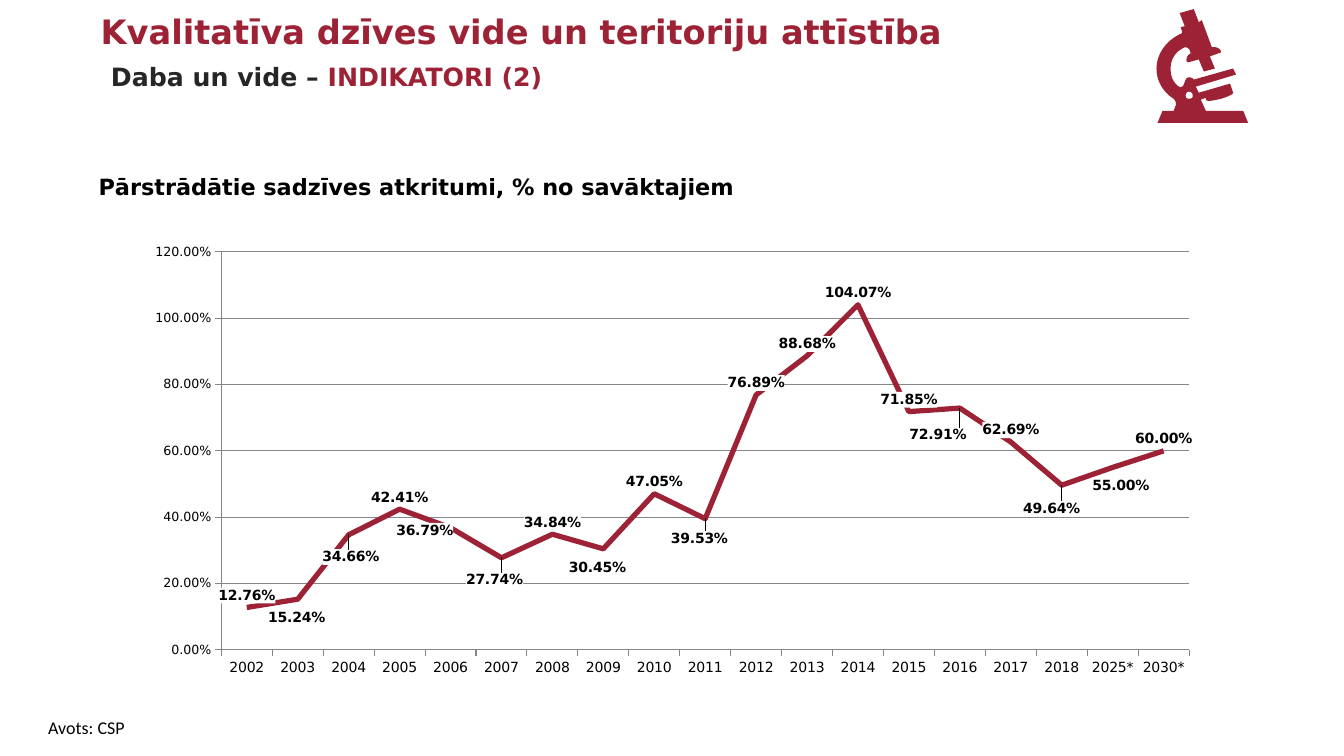
import pptx
import pptx.chart.data
import pptx.dml.color
import pptx.enum.chart
import pptx.enum.text
import pptx.oxml
import pptx.oxml.ns
import pptx.util

CRIMSON = "9D2235"
CHARCOAL = "262626"
BLACK = "000000"
WHITE = "FFFFFF"
GREY = "868686"

YEARS = [str(year) for year in range(2002, 2019)] + ["2025*", "2030*"]
RECYCLED = [0.1276, 0.1524, 0.3466, 0.4241, 0.3679, 0.2774, 0.3484, 0.3045, 0.4705, 0.3953,
            0.7689, 0.8868, 1.0407, 0.7185, 0.7291, 0.6269, 0.4964, 0.55, 0.6]
LABEL_SHIFTS = {"2003": (-0.1, 6.7), "2004": (0.2, 7.6), "2006": (-2.4, 3.3),
                "2007": (-0.65, 7.6), "2009": (-0.55, 6.9), "2011": (-0.55, 7.1),
                "2016": (-2.05, 8.7), "2018": (-0.95, 7.8), "2025*": (0.75, 6.7)}

MICROSCOPE = [
    (11.84, 0.09), (11.7, 0.13), (11.75, 0.26), (11.71, 0.27), (11.72, 0.3),
    (11.73, 0.32, 11.72, 0.34, 11.7, 0.34), (11.56, 0.41, 11.47, 0.54, 11.47, 0.68),
    (11.47, 0.8, 11.53, 0.91, 11.64, 0.98), (11.66, 1, 11.67, 1.03, 11.66, 1.05),
    (11.64, 1.1), (11.53, 1.1), (11.48, 1.22), (12.38, 1.22), (12.33, 1.1), (11.96, 1.1),
    (11.91, 0.99), (11.96, 0.97), (11.96, 0.99), (11.97, 1.01, 12.03, 1, 12.11, 0.98),
    (12.18, 0.96, 12.24, 0.93, 12.23, 0.92), (12.2, 0.83), (11.89, 0.92), (11.86, 0.86),
    (12.26, 0.74), (12.23, 0.68), (11.84, 0.79), (11.82, 0.76, 11.77, 0.76, 11.76, 0.79),
    (11.74, 0.84), (11.73, 0.87, 11.7, 0.87, 11.68, 0.85),
    (11.63, 0.81, 11.61, 0.75, 11.61, 0.68), (11.61, 0.6, 11.65, 0.52, 11.73, 0.48),
    (11.75, 0.46, 11.79, 0.47, 11.8, 0.5), (11.81, 0.53),
    (11.78, 0.54, 11.76, 0.58, 11.77, 0.61), (11.78, 0.62), (11.89, 0.59), (11.94, 0.71),
    (12.05, 0.68), (12, 0.56), (12.11, 0.52), (12.11, 0.51),
    (12.1, 0.48, 12.06, 0.46, 12.02, 0.47), (11.92, 0.2), (11.89, 0.22)]
SCREW = [
    (11.79, 0.91), (11.82, 0.91, 11.83, 0.93, 11.83, 0.95),
    (11.83, 0.97, 11.82, 0.98, 11.79, 0.98), (11.77, 0.98, 11.76, 0.97, 11.76, 0.95),
    (11.76, 0.93, 11.77, 0.91, 11.79, 0.91)]


def colour(value):
    return pptx.dml.color.RGBColor.from_string(value)


def chart_xml(markup):
    head, tail = markup.split(">", 1) if not markup.split(">", 1)[0].endswith("/") else (
        markup.split("/>", 1)[0], None)
    names = pptx.oxml.ns.nsdecls("c", "a")
    return pptx.oxml.parse_xml(f"{head} {names}/>" if tail is None else f"{head} {names}>{tail}")


def layout_xml(marks, **shares):
    sides = "".join(f'<c:{side} val="{share / 100:.4f}"/>' for side, share in shares.items())
    return chart_xml(f"<c:layout><c:manualLayout>{marks}{sides}</c:manualLayout></c:layout>")


def outline_points(steps, units, pieces=8):
    points = [steps[0]]
    for step in steps[1:]:
        if len(step) == 2:
            points.append(step)
            continue
        corners = [points[-1], step[:2], step[2:4], step[4:]]
        for piece in range(1, pieces + 1):
            t = piece / pieces
            weights = ((1 - t) ** 3, 3 * t * (1 - t) ** 2, 3 * t * t * (1 - t), t ** 3)
            points.append(tuple(sum(w * corner[axis] for w, corner in zip(weights, corners))
                                for axis in (0, 1)))
    return [(x * units, y * units) for x, y in points]


class Page:
    font = "DejaVu Sans"

    def __init__(self, deck):
        self.width, self.height = deck.slide_width, deck.slide_height
        self.slide = deck.slides.add_slide(deck.slide_layouts[6])

    def place(self, left, top, width, height):
        return [round(share / 100 * full) for share, full in zip(
            (left, top, width, height), (self.width, self.height) * 2)]

    def style(self, font, size, shade=BLACK, bold=False, name=None):
        font.name, font.size, font.bold = name or self.font, pptx.util.Pt(size), bold
        font.color.rgb = colour(shade)

    def text(self, area, spans, size, bold=True, name=None, wrap=True, inset=None,
             gap=None, line=None):
        box = self.slide.shapes.add_textbox(*self.place(*area))
        frame = box.text_frame
        frame.word_wrap = wrap
        if inset is not None:
            frame.margin_left = frame.margin_right = pptx.util.Inches(inset)
            frame.margin_top = frame.margin_bottom = pptx.util.Inches(inset)
        para = frame.paragraphs[0]
        if gap is not None:
            para.space_before = para.space_after = pptx.util.Pt(gap)
        if line is not None:
            para.line_spacing = line
        for words, shade in spans:
            span = para.add_run()
            span.text = words
            self.style(span.font, size, shade, bold, name)

    def icon(self, outlines, shade):
        units = 10000
        first, *others = [outline_points(steps, units) for steps in outlines]
        builder = self.slide.shapes.build_freeform(*first[0], scale=914400 / units)
        builder.add_line_segments(first[1:], close=True)
        for points in others:
            builder.move_to(*points[0])
            builder.add_line_segments(points[1:], close=True)
        shape = builder.convert_to_shape()
        shape.shadow.inherit = False
        shape.fill.solid()
        shape.fill.fore_color.rgb = colour(shade)
        shape.line.fill.background()

    def line_chart(self, area, plot_area, years, values, shifts, shade):
        chart_data = pptx.chart.data.CategoryChartData(number_format="0.00%")
        chart_data.categories = years
        chart_data.add_series("Series 1", values)
        chart = self.slide.shapes.add_chart(
            pptx.enum.chart.XL_CHART_TYPE.LINE_STACKED, *self.place(*area), chart_data).chart
        chart.has_legend = chart.has_title = False
        self.style(chart.font, 10, name="Calibri")
        self.axes(chart)
        plot = chart.plots[0]
        plot.vary_by_categories = False
        series = plot.series[0]
        series.smooth = False
        series.marker.style = pptx.enum.chart.XL_MARKER_STYLE.NONE
        series.format.line.color.rgb = colour(shade)
        series.format.line.width = pptx.util.Pt(3.75)
        self.labels(series, years, shifts)

        plot_element = chart.element.find(".//" + pptx.oxml.ns.qn("c:plotArea"))
        for old in plot_element.findall(pptx.oxml.ns.qn("c:layout")):
            plot_element.remove(old)
        marks = ('<c:layoutTarget val="inner"/><c:xMode val="edge"/><c:yMode val="edge"/>')
        plot_element.insert(0, layout_xml(marks, **plot_area))

    def axes(self, chart):
        for axis, size in ((chart.category_axis, 10), (chart.value_axis, 9)):
            self.style(axis.tick_labels.font, size)
            axis.major_tick_mark = pptx.enum.chart.XL_TICK_MARK.OUTSIDE
            axis.format.line.color.rgb = colour(GREY)
            axis.format.line.width = pptx.util.Pt(0.75)
        scale = chart.value_axis
        scale.minimum_scale, scale.maximum_scale, scale.major_unit = 0, 1.2, 0.2
        scale.tick_labels.number_format = "0.00%"
        scale.tick_labels.number_format_is_linked = False
        scale.major_gridlines.format.line.color.rgb = colour(GREY)
        scale.major_gridlines.format.line.width = pptx.util.Pt(0.75)

    def labels(self, series, years, shifts):
        above = pptx.enum.chart.XL_LABEL_POSITION.ABOVE
        common = series.data_labels
        common.show_value = True
        moved = [(series.points[years.index(year)].data_label, shift)
                 for year, shift in shifts.items()]
        for label in [common] + [label for label, shift in moved]:
            self.style(label.font, 10, bold=True)
            label.position = above
        for element in series.data_labels._element.iter(pptx.oxml.ns.qn("c:txPr")):
            element.addprevious(chart_xml('<c:numFmt formatCode="0.00%" sourceLinked="0"/>'))
            element.addprevious(chart_xml(
                f'<c:spPr><a:solidFill><a:srgbClr val="{WHITE}"/></a:solidFill></c:spPr>'))
        for element in common._element.findall(pptx.oxml.ns.qn("c:dLbl")):
            index = element.find(pptx.oxml.ns.qn("c:idx"))
            x, y = shifts[years[int(index.get("val"))]]
            index.addnext(layout_xml("", x=x, y=y))


def main():
    deck = pptx.Presentation()
    deck.slide_width, deck.slide_height = pptx.util.Inches(13.33), pptx.util.Inches(7.5)
    page = Page(deck)
    page.text((7.12, 0.8, 63.4, 6.67),
              [("Kvalitatīva dzīves vide un teritoriju attīstība", CRIMSON)],
              24, wrap=False, inset=0.05, gap=6)
    page.text((7.88, 7.47, 34.95, 5.33),
              [("Daba un vide – ", CHARCOAL), ("INDIKATORI (2)", CRIMSON)],
              18, wrap=False, inset=0.05, gap=6)
    page.icon([MICROSCOPE, SCREW], CRIMSON)
    page.line_chart((9.98, 31.2, 80.1, 59.33), {"x": 8.1, "y": 3.6, "w": 89.9, "h": 88.7},
                    YEARS, RECYCLED, LABEL_SHIFTS, CRIMSON)
    page.text((6.6, 22.67, 55.43, 10),
              [("Pārstrādātie sadzīves atkritumi, % no savāktajiem", BLACK)], 16, line=0.9)
    page.text((2.85, 94.13, 12.9, 4.27), [("Avots: CSP", BLACK)], 12.8,
              bold=False, name="Calibri")
    deck.save("out.pptx")


if __name__ == "__main__":
    main()
